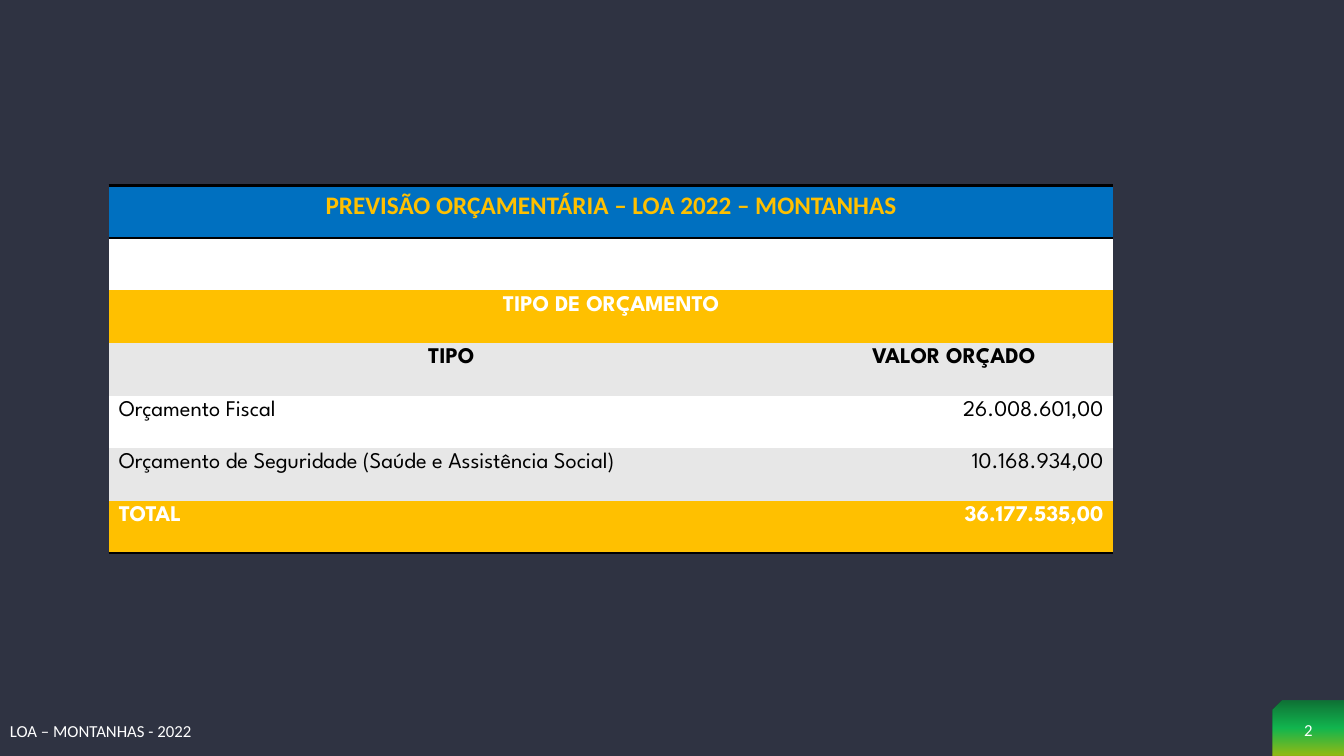
from lxml.etree import SubElement
from pptx import Presentation
from pptx.dml.color import RGBColor
from pptx.enum.shapes import MSO_SHAPE
from pptx.enum.text import MSO_ANCHOR, PP_ALIGN
from pptx.oxml import parse_xml
from pptx.oxml.ns import nsdecls, qn
from pptx.util import Cm, Pt

LEFT, MID, RIGHT = PP_ALIGN.LEFT, PP_ALIGN.CENTER, PP_ALIGN.RIGHT
BLUE, GOLD, GRAY, WHITE, BLACK = "0070C0", "FFC000", "E7E7E7", "FFFFFF", "000000"
PLAIN = "{2D5ABB26-0587-4C30-8999-92F81FD0307C}"  # table style without grid
SPARTAN = "League Spartan"


def color(code):
    return RGBColor.from_string(code)


class Deck:
    font = "Calibri"
    small = 12

    def __init__(self, wide, high, back):
        self.prs = Presentation()
        self.prs.slide_width, self.prs.slide_height = Cm(wide), Cm(high)
        self.slide = self.prs.slides.add_slide(self.prs.slide_layouts[6])
        fill = self.slide.background.fill
        fill.solid()
        fill.fore_color.rgb = color(back)

    def put_text(self, frame, text, size, ink, align=LEFT, bold=False, font=None):
        frame.text = text
        para = frame.paragraphs[0]
        para.alignment = align
        for run in para.runs:
            run.font.name = font or self.font
            run.font.size = Pt(size)
            run.font.bold = bold
            run.font.color.rgb = color(ink)

    def label(self, box, text, align=LEFT, anchor=MSO_ANCHOR.TOP):
        frame = self.slide.shapes.add_textbox(*map(Cm, box)).text_frame
        frame.word_wrap = True
        frame.vertical_anchor = anchor
        self.put_text(frame, text, self.small, WHITE, align)

    def badge(self, box, stops, alpha):
        """Draw a corner tab, cut at its top left, with a downward gradient."""
        shape = self.slide.shapes.add_shape(
            MSO_SHAPE.SNIP_1_RECTANGLE, *map(Cm, box))
        shape.shadow.inherit = False
        shape.line.fill.background()
        props = shape._element.spPr
        props.find(qn("a:xfrm")).set("flipH", "1")
        marks = "".join(
            f'<a:gs pos="{pos * 1000}"><a:srgbClr val="{code}">'
            f'<a:alpha val="{alpha * 1000}"/></a:srgbClr></a:gs>'
            for pos, code in stops)
        props.find(qn("a:prstGeom")).addnext(parse_xml(
            f'<a:gradFill {nsdecls("a")} rotWithShape="1"><a:gsLst>{marks}</a:gsLst>'
            '<a:lin ang="5400000" scaled="0"/></a:gradFill>'))

    def edge(self, cell, sides, width=2):
        """Rule the given sides (T, B) of a cell in black."""
        props = cell._tc.get_or_add_tcPr()
        for spot, side in enumerate(sides):
            line = parse_xml(f'<a:ln{side} {nsdecls("a")} w="{Pt(width)}"/>')
            fill = SubElement(line, qn("a:solidFill"))
            SubElement(fill, qn("a:srgbClr")).set("val", BLACK)
            props.insert(spot, line)

    def table(self, box, widths, rows):
        """Each row is (texts, fill, ink, aligns, bold, size, font, ruled sides)."""
        frame = self.slide.shapes.add_table(
            len(rows), len(widths), *map(Cm, box))
        grid = frame.table
        grid.first_row = grid.horz_banding = False
        grid._tbl.tblPr.find(qn("a:tableStyleId")).text = PLAIN
        for col, width in zip(grid.columns, widths):
            col.width = Cm(width)
        for r, (texts, back, ink, aligns, bold, size, font, sides) in enumerate(rows):
            grid.rows[r].height = Cm(box[3] / len(rows))
            if len(texts) == 1:
                grid.cell(r, 0).merge(grid.cell(r, len(widths) - 1))
            for c in range(len(widths)):
                cell = grid.cell(r, c)
                cell.fill.solid()
                cell.fill.fore_color.rgb = color(back)
                self.edge(cell, sides)
                if c < len(texts) and texts[c]:
                    self.put_text(cell.text_frame, texts[c], size, ink,
                                  aligns[c], bold, font)


def main():
    deck = Deck(33.87, 19.05, "2F3342")
    deck.badge((32.08, 17.65, 1.79, 1.4),
               [(0, "038B30"), (50, "05EE55"), (100, "C0F400")], 70)
    both, ends = (MID, MID), (LEFT, RIGHT)
    deck.table((2.74, 4.67, 25.32, 9.27), (17.27, 8.05), [
        (["PREVISÃO ORÇAMENTÁRIA – LOA 2022 – MONTANHAS"],
         BLUE, GOLD, both, True, 18, None, "TB"),
        ([""], WHITE, BLACK, both, False, 16, SPARTAN, ""),
        (["TIPO DE ORÇAMENTO"], GOLD, WHITE, both, True, 16, SPARTAN, ""),
        (["TIPO", "VALOR ORÇADO"], GRAY, BLACK, both, True, 16, SPARTAN, ""),
        (["Orçamento Fiscal", "26.008.601,00"],
         WHITE, BLACK, ends, False, 16, SPARTAN, ""),
        (["Orçamento de Seguridade (Saúde e Assistência Social)", "10.168.934,00"],
         GRAY, BLACK, ends, False, 16, SPARTAN, ""),
        (["TOTAL", "36.177.535,00"], GOLD, WHITE, ends, True, 16, SPARTAN, "B"),
    ])
    deck.label((32.08, 17.81, 1.79, 1.14), "2", MID, MSO_ANCHOR.MIDDLE)
    deck.label((0, 18.03, 16.94, 0.77), "LOA – MONTANHAS - 2022")
    deck.prs.save("out.pptx")


if __name__ == "__main__":
    main()
